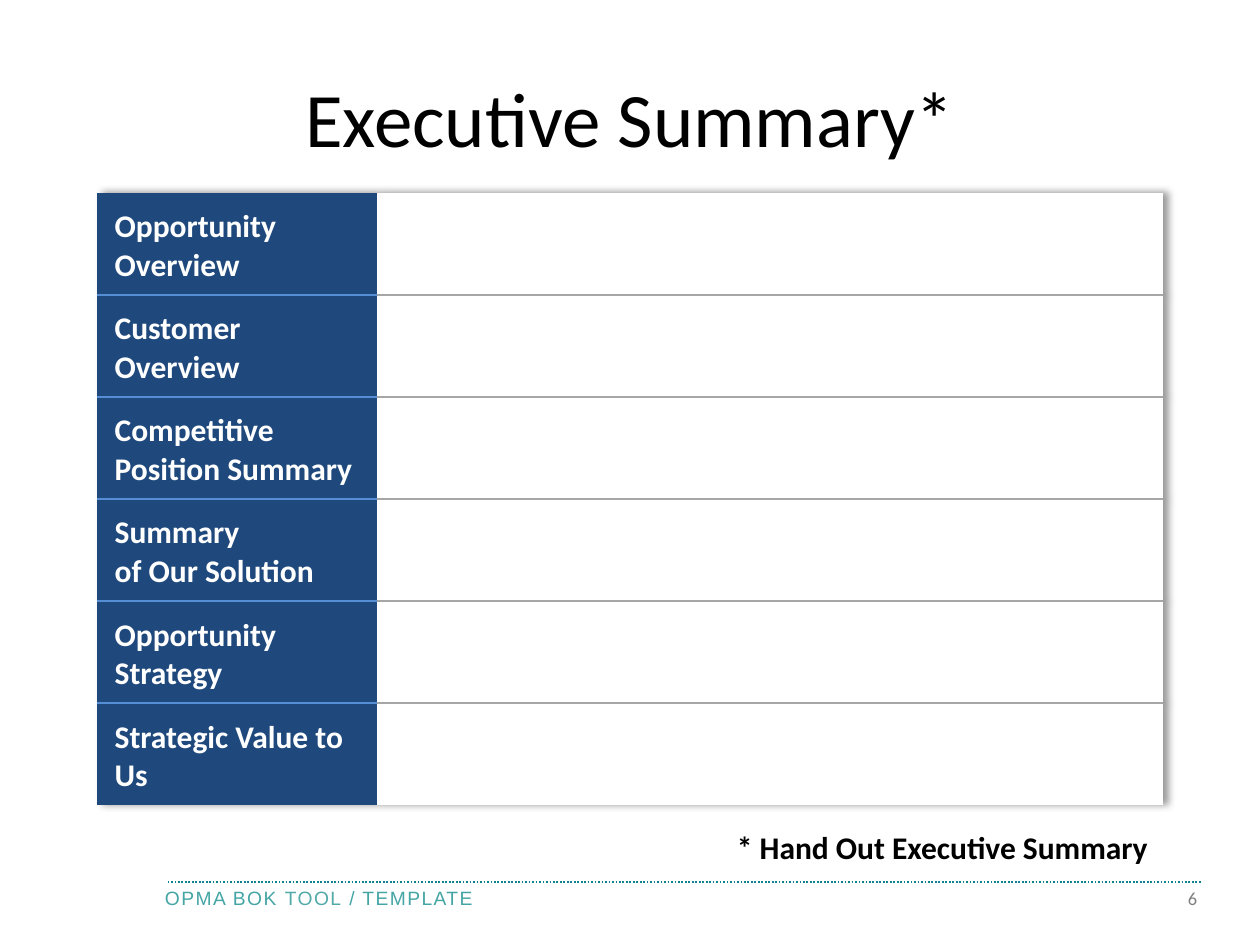
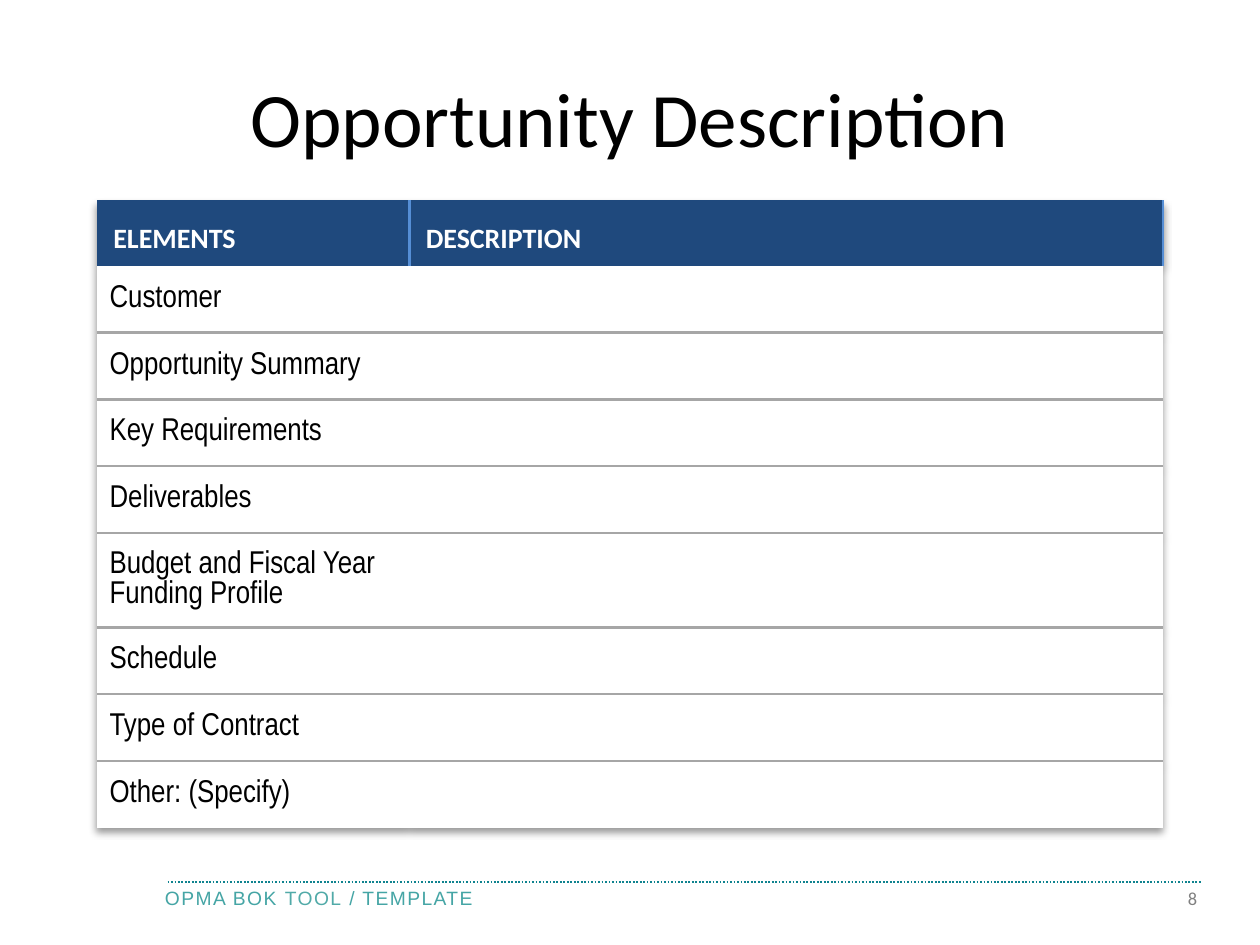
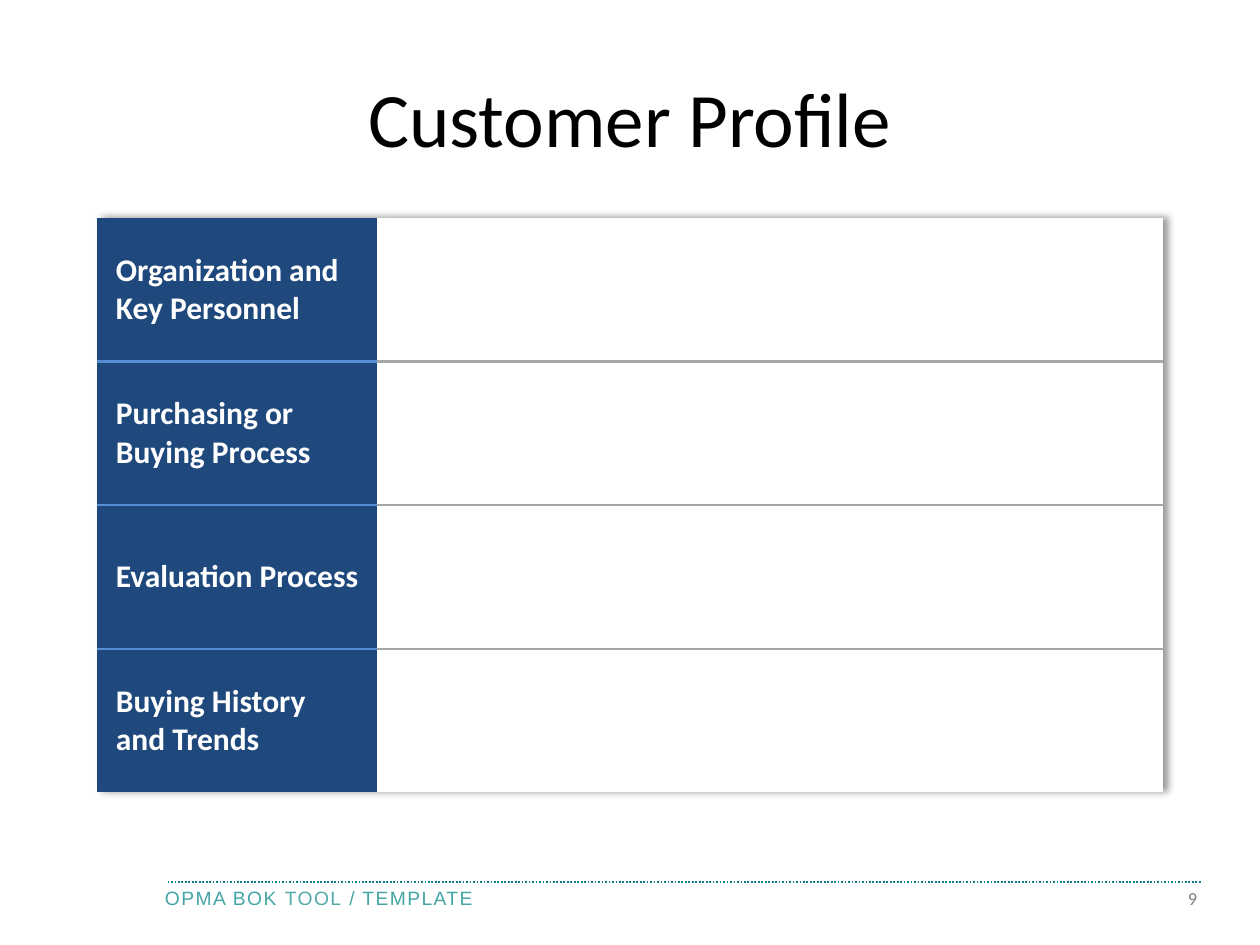
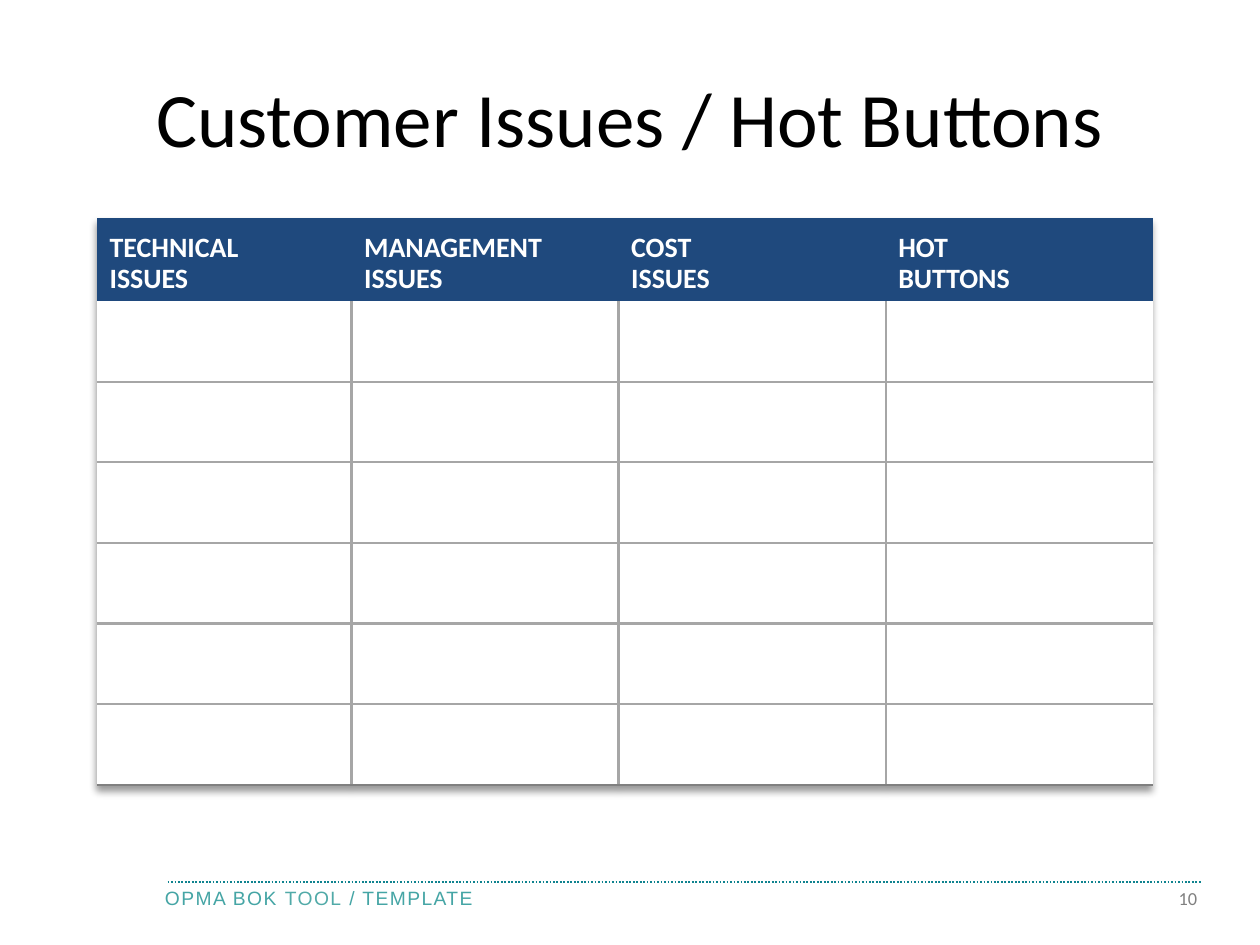
from dataclasses import dataclass
from typing import Optional

from lxml.etree import SubElement
from pptx import Presentation
from pptx.dml.color import RGBColor
from pptx.enum.dml import MSO_LINE
from pptx.enum.shapes import MSO_CONNECTOR
from pptx.enum.text import MSO_ANCHOR as ANC, MSO_AUTO_SIZE as FIT, PP_ALIGN as AL
from pptx.oxml import parse_xml
from pptx.oxml.ns import nsdecls, qn
from pptx.util import Emu, Pt

SCALE = 9144  # EMU per px, 100 px to the inch
COLORS = {
    "navy": "1F497D", "blue": "558ED5", "grey": "A6A6A6", "dark_grey": "808080",
    "white": "FFFFFF", "black": "000000",
    "teal": "45A5A5", "mint": "51AAA8", "rule": "0F838F",
}
NO_GRID_STYLE = "{2D5ABB26-0587-4C30-8999-92F81FD0307C}"
SHADOW_RIGHT, SHADOW_DOWN = 0, 5400000


@dataclass(frozen=True)
class Font:
    size: float
    color: str = "black"
    name: str = "Calibri"
    bold: bool = False


@dataclass(frozen=True)
class CellStyle:
    font: Font
    fill: str = "white"
    anchor: ANC = ANC.MIDDLE
    margins: tuple[int, int, int, int] = (10, 5, 10, 5)
    spacing: Optional[float] = None


@dataclass(frozen=True)
class Grid:
    top: int
    cols: list[int]
    rows: list[int]
    texts: list[list[str]]
    head: CellStyle
    body: CellStyle
    shadow: int
    head_row: bool = False  # otherwise the first column is the head
    head_line: Optional[str] = None
    body_columns: Optional[str] = None
    bottom: Optional[str] = None


@dataclass(frozen=True)
class Page:
    title: str
    number: int
    grid: Grid
    note: str = ""


def px(n: int) -> Emu:
    return Emu(n * SCALE)


def rgb(name: str) -> RGBColor:
    return RGBColor.from_string(COLORS[name])


def set_font(target, font: Font) -> None:
    target.name, target.size, target.bold = font.name, Pt(font.size), font.bold
    target.color.rgb = rgb(font.color)


def add_text(slide, box: tuple[int, int, int, int], text: str, font: Font,
             align: AL = AL.LEFT, anchor: ANC = ANC.TOP, inset: bool = True,
             wrap: bool = True, grow: bool = True):
    tf = slide.shapes.add_textbox(*map(px, box)).text_frame
    tf.word_wrap = wrap
    tf.auto_size = FIT.SHAPE_TO_FIT_TEXT if grow else FIT.NONE
    tf.vertical_anchor = anchor
    if not inset:
        tf.margin_left = tf.margin_top = tf.margin_right = tf.margin_bottom = 0
    p = tf.paragraphs[0]
    p.text, p.alignment = text, align
    set_font(p.font, font)
    return p


def add_footer(slide, number: int) -> None:
    p = add_text(slide, (131, 703, 283, 18), "", Font(11, "teal", "Arial"), inset=False)
    for text, color in (("OPMA BOK ", "teal"), ("TOOL", "mint"), (" / TEMPLATE", "teal")):
        r = p.add_run()
        r.text = text
        r.font.color.rgb = rgb(color)
        r._r.get_or_add_rPr().set("spc", "80")
    line = slide.shapes.add_connector(MSO_CONNECTOR.STRAIGHT, px(133), px(700), px(954), px(700))
    line.line.color.rgb = rgb("rule")
    line.line.width = Pt(1)
    line.line.dash_style = MSO_LINE.ROUND_DOT
    SubElement(line._element.spPr, qn("a:effectLst"))
    add_text(slide, (802, 704, 148, 18), str(number), Font(10.5, "dark_grey"),
             AL.RIGHT, ANC.MIDDLE, inset=False)


def is_head(grid: Grid, row: int, col: int) -> bool:
    return row == 0 if grid.head_row else col == 0


def line_below(grid: Grid, row: int, col: int) -> Optional[str]:
    if row == len(grid.rows) - 1:
        return grid.bottom
    return grid.head_line if is_head(grid, row, col) and not grid.head_row else (
        None if is_head(grid, row, col) else "grey")


def line_right(grid: Grid, row: int, col: int) -> Optional[str]:
    if not grid.head_row:
        return None
    if row == 0:
        return grid.head_line
    return grid.body_columns if col < len(grid.cols) - 1 else None


def add_borders(cell, grid: Grid, row: int, col: int) -> None:
    edges = {
        "lnL": line_right(grid, row, col - 1) if col else None,
        "lnR": line_right(grid, row, col),
        "lnT": line_below(grid, row - 1, col) if row else None,
        "lnB": line_below(grid, row, col),
    }
    tc_pr = cell._tc.get_or_add_tcPr()
    for tag, color in edges.items():
        if color:
            ln = SubElement(tc_pr, qn(f"a:{tag}"), w=str(Pt(1.5)))
            fill = SubElement(ln, qn("a:solidFill"))
            SubElement(fill, qn("a:srgbClr"), val=COLORS[color])


def fill_cell(cell, text: str, style: CellStyle) -> None:
    cell.fill.solid()
    cell.fill.fore_color.rgb = rgb(style.fill)
    cell.vertical_anchor = style.anchor
    (cell.margin_left, cell.margin_top,
     cell.margin_right, cell.margin_bottom) = map(px, style.margins)
    p = cell.text_frame.paragraphs[0]
    p.text = text
    if style.spacing:
        p.line_spacing = style.spacing
    set_font(p.font, style.font)


def add_grid(slide, grid: Grid) -> None:
    frame = slide.shapes.add_table(len(grid.rows), len(grid.cols), px(77), px(grid.top),
                                   px(sum(grid.cols)), px(sum(grid.rows)))
    table = frame.table
    table.first_row = table.horz_banding = False
    tbl_pr = table._tbl.tblPr
    tbl_pr[0].text = NO_GRID_STYLE
    tbl_pr.insert(0, parse_xml(
        f'<a:effectLst {nsdecls("a")}><a:outerShdw blurRad="50800" dist="38100" '
        f'dir="{grid.shadow}" rotWithShape="0"><a:srgbClr val="{COLORS["black"]}">'
        '<a:alpha val="40000"/></a:srgbClr></a:outerShdw></a:effectLst>'))
    for column, width in zip(table.columns, grid.cols):
        column.width = px(width)
    for i, height in enumerate(grid.rows):
        table.rows[i].height = px(height)
        texts = grid.texts[i] if i < len(grid.texts) else []
        for j in range(len(grid.cols)):
            cell = table.cell(i, j)
            add_borders(cell, grid, i, j)
            style = grid.head if is_head(grid, i, j) else grid.body
            fill_cell(cell, texts[j] if j < len(texts) else "", style)


# Cell styles
LABEL = Font(18, "white", bold=True)
HEADING = Font(16, "white", bold=True)
BODY = CellStyle(Font(18, name="Arial Narrow"))

PAGES = [
    Page("Executive Summary*", 6, Grid(
        153, [222, 624], [81] * 6,
        [["Opportunity Overview"], ["Customer Overview"], ["Competitive\nPosition Summary"],
         ["Summary\nof Our Solution"], ["Opportunity\nStrategy"], ["Strategic Value to Us"]],
        CellStyle(LABEL, "navy", ANC.BOTTOM, (14, 5, 10, 8)), BODY,
        SHADOW_RIGHT, head_line="blue"), "* Hand Out Executive Summary"),
    Page("Opportunity Description", 8, Grid(
        159, [248, 598], [52, *[53] * 4, 75, *[53] * 3],
        [["ELEMENTS", "DESCRIPTION"], ["Customer"], ["Opportunity Summary"],
         ["Key Requirements"], ["Deliverables"], ["Budget and Fiscal Year Funding Profile"],
         ["Schedule"], ["Type of Contract"], ["Other: (Specify)"]],
        CellStyle(HEADING, "navy", ANC.BOTTOM, (13, 5, 10, 8)), BODY,
        SHADOW_DOWN, head_row=True, head_line="blue")),
    Page("Customer Profile", 9, Grid(
        173, [222, 624], [114] * 4,
        [["Organization and Key Personnel"], ["Purchasing or Buying Process"],
         ["Evaluation Process"], ["Buying History\nand Trends"]],
        CellStyle(LABEL, "navy", margins=(15, 5, 10, 5)), BODY,
        SHADOW_RIGHT, head_line="blue")),
    Page("Customer Issues / Hot Buttons", 10, Grid(
        173, [202, *[212] * 3], [66, *[64] * 6],
        [["TECHNICAL\nISSUES", "MANAGEMENT\nISSUES", "COST\nISSUES", "HOT\nBUTTONS"]],
        CellStyle(HEADING, "navy", ANC.BOTTOM, spacing=0.9), BODY,
        SHADOW_DOWN, head_row=True, body_columns="grey", bottom="dark_grey")),
]


def main() -> None:
    prs = Presentation()
    prs.slide_width, prs.slide_height = px(1000), px(750)
    for page in PAGES:
        slide = prs.slides.add_slide(prs.slide_layouts[6])
        add_footer(slide, page.number)
        add_text(slide, (50, 30, 900, 125), page.title, Font(44),
                 AL.CENTER, ANC.MIDDLE, grow=False)
        add_grid(slide, page.grid)
        if page.note:
            add_text(slide, (575, 652, 351, 40), page.note, Font(18, bold=True), wrap=False)
    prs.save("out.pptx")


if __name__ == "__main__":
    main()
